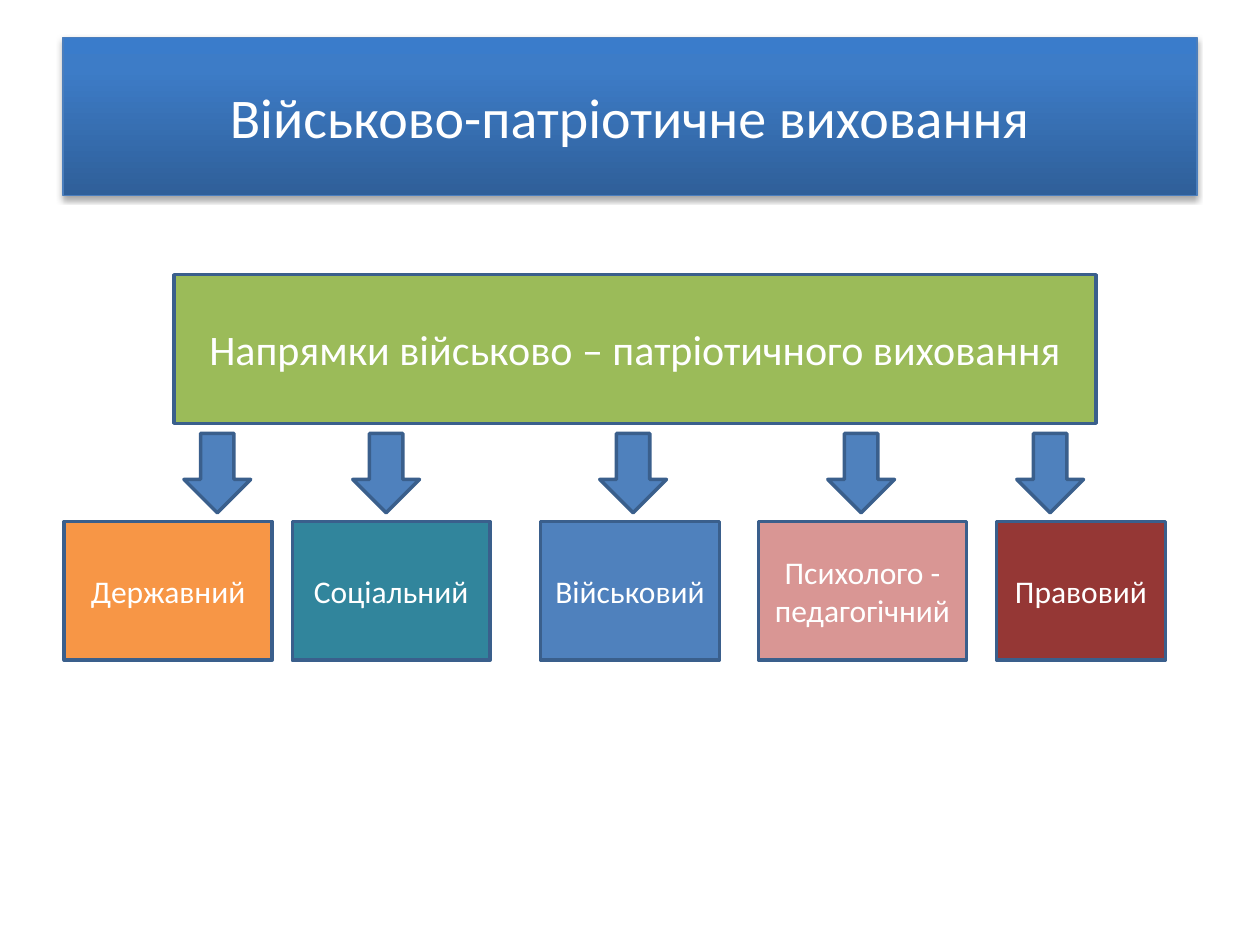
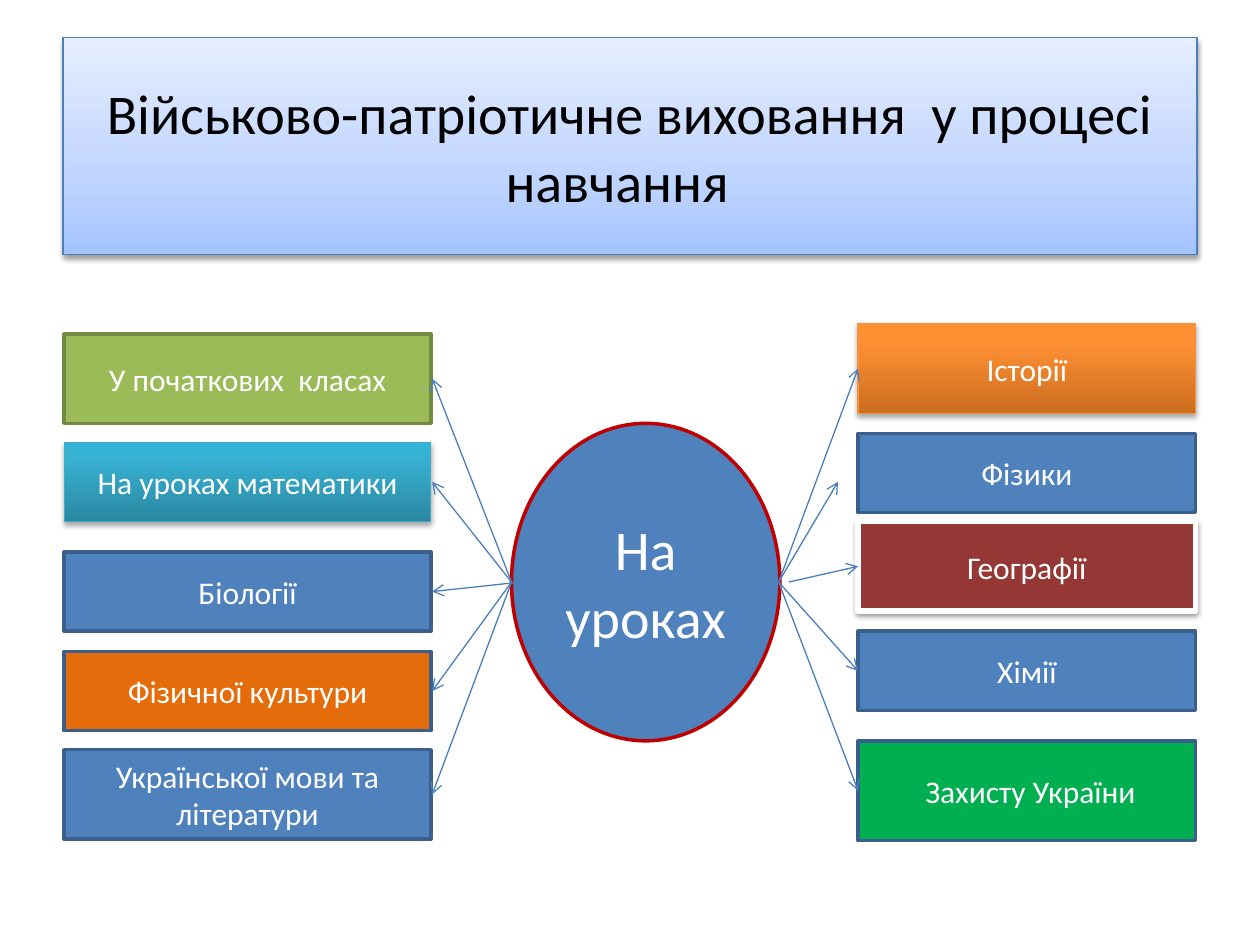
"""Builds two slides on military and patriotic education: its branches and its school lessons."""
import copy
import pptx
import pptx.util
import pptx.dml.color
import pptx.enum.shapes
import pptx.enum.text
import pptx.oxml
import pptx.oxml.ns

RGB = pptx.dml.color.RGBColor
KIND = pptx.enum.shapes.MSO_SHAPE
TEXT = pptx.enum.text
qn = pptx.oxml.ns.qn

WHITE = RGB(0xFF, 0xFF, 0xFF)
BLACK = RGB(0, 0, 0)
BLUE = RGB(0x4F, 0x81, 0xBD)
NAVY = RGB(0x3A, 0x5F, 0x8C)
EDGE = RGB(0x4B, 0x7E, 0xBC)
GREEN = RGB(0x9B, 0xBB, 0x59)
OLIVE = RGB(0x73, 0x8A, 0x42)
AMBER = RGB(0xF7, 0x96, 0x46)
TEAL = RGB(0x31, 0x85, 0x9C)
PINK = RGB(0xD9, 0x96, 0x94)
WINE = RGB(0x95, 0x37, 0x35)
RUST = RGB(0xE4, 0x6C, 0x0A)
LEAF = RGB(0x00, 0xB0, 0x50)
RED = RGB(0xC0, 0x00, 0x00)
AQUA = RGB(0x46, 0xAA, 0xC5)
GOLD = RGB(0xF6, 0x92, 0x40)
DEEP = [(0, RGB(0x2F, 0x5F, 0x99)), (.8, RGB(0x3D, 0x7C, 0xC7)), (1, RGB(0x3A, 0x7C, 0xCB))]
PALE = [(0, RGB(0xA4, 0xC4, 0xFF)), (.35, RGB(0xBF, 0xD4, 0xFF)), (1, RGB(0xE6, 0xEE, 0xFF))]
SEA = [(0, RGB(0x2A, 0x88, 0xA2)), (.8, RGB(0x37, 0xB1, 0xD2)), (1, RGB(0x34, 0xB4, 0xD6))]
SUN = [(0, RGB(0xCC, 0x6E, 0x20)), (.8, RGB(0xFF, 0x90, 0x34)), (1, RGB(0xFF, 0x91, 0x36))]

FONT = "Calibri"
WIDE, HIGH = pptx.util.Inches(10), pptx.util.Inches(7.5)
UNIT = WIDE / 100

STRONG = (1.8, 35)
SOFT = (1.6, 38)
PLAIN = (NAVY, 2, None)

HEAD = "Військово-патріотичне виховання"
THEME = "Напрямки військово – патріотичного виховання"
AREAS = [
    ("Державний", AMBER, 5.1, 16.5, 14.6),
    ("Соціальний", TEAL, 23.2, 15.7, 28),
    ("Військовий", BLUE, 42.9, 14.2, 47.6),
    ("Психолого - педагогічний", PINK, 60.2, 16.5, 65.7),
    ("Правовий", WINE, 79.1, 13.4, 80.7),
]

GOAL = "Військово-патріотичне виховання  у процесі навчання  "
HUB = "На уроках"
LEFT = [
    ("У початкових  класах", 26.5, 7.1, GREEN, (OLIVE, 2, None)),
    ("На уроках математики", 35.1, 6.3, SEA, (AQUA, .75, STRONG)),
    ("Біології", 43.8, 6.3, BLUE, PLAIN),
    ("Фізичної культури", 51.7, 6.3, RUST, PLAIN),
    ("Української мови та літератури", 59.5, 7.1, BLUE, PLAIN),
]
RIGHT = [
    ("Історії", 25.7, 7.1, SUN, (GOLD, .75, STRONG)),
    ("Фізики", 34.4, 6.3, BLUE, PLAIN),
    ("Географії", 41.4, 7.1, WINE, (WHITE, 3, SOFT)),
    ("Хімії", 50.1, 6.3, BLUE, PLAIN),
    (" Захисту України", 58.8, 7.9, LEAF, PLAIN),
]
SIDES = [
    (LEFT, 5.1, 29.1, 34.3, 40.6, {2: (.7, 0, 0)}),
    (RIGHT, 68.1, 26.8, 68.1, 61.8, {1: (0, -1.6, .7), 2: (.8, 0, 0)}),
]


def cells(*nums):
    return [round(n * UNIT) for n in nums]


def paint(shape, fill):
    if not isinstance(fill, list):
        shape.fill.solid()
        shape.fill.fore_color.rgb = fill
        return
    shape.fill.gradient()
    shape.fill.gradient_angle = 90
    stops = shape.element.spPr.find(".//" + qn("a:gsLst"))
    stops.append(copy.deepcopy(stops[0]))
    for stop, (place, tint) in zip(shape.fill.gradient_stops, fill):
        stop.position = place
        stop.color.rgb = tint


def shade(shape, gap, alpha):
    blur, dist = pptx.util.Pt(3.1), pptx.util.Pt(gap)
    shape.element.spPr.find(qn("a:effectLst")).append(pptx.oxml.parse_xml(
        f'<a:outerShdw {pptx.oxml.ns.nsdecls("a")} blurRad="{blur}" dist="{dist}" dir="5400000" '
        f'rotWithShape="0"><a:srgbClr val="000000"><a:alpha val="{alpha * 1000}"/>'
        '</a:srgbClr></a:outerShdw>'))


def block(slide, box, fill, trim=PLAIN, text="", size=18, ink=WHITE, kind=KIND.RECTANGLE):
    shape = slide.shapes.add_shape(kind, *cells(*box))
    line, weight, cast = trim
    paint(shape, fill)
    shape.line.color.rgb = line
    shape.line.width = pptx.util.Pt(weight)
    shape.shadow.inherit = False
    if cast:
        shade(shape, *cast)
    if text:
        frame = shape.text_frame
        frame.text = text
        frame.word_wrap = True
        frame.vertical_anchor = TEXT.MSO_ANCHOR.MIDDLE
        para = frame.paragraphs[0]
        para.alignment = TEXT.PP_ALIGN.CENTER
        font = para.runs[0].font
        font.name, font.size, font.color.rgb = FONT, pptx.util.Pt(size), ink


def title(slide, text, tall, fill, ink, cast):
    block(slide, (5, 3, 90, tall), fill, (EDGE, .75, cast), text, 32, ink)


def arrow(slide, *ends):
    link = slide.shapes.add_connector(pptx.enum.shapes.MSO_CONNECTOR.STRAIGHT, *cells(*ends))
    link.line.color.rgb = EDGE
    link.line.width = pptx.util.Pt(.75)
    props = link.element.spPr
    tip = props.find(qn("a:ln")).makeelement(qn("a:tailEnd"), {"type": "arrow"})
    props.find(qn("a:ln")).append(tip)
    props.append(props.makeelement(qn("a:effectLst"), {}))


def areas(slide):
    title(slide, HEAD, 12.5, DEEP, WHITE, STRONG)
    block(slide, (13.8, 21.8, 73.2, 11.8), GREEN, text=THEME, size=24)
    for text, fill, left, wide, point in AREAS:
        block(slide, (left, 41.4, wide, 11), fill, text=text)
        block(slide, (point, 34.4, 5.3, 6.3), BLUE, kind=KIND.DOWN_ARROW)


def lessons(slide):
    title(slide, GOAL, 17.2, PALE, BLACK, SOFT)
    block(slide, (40.6, 33.6, 21.3, 25.2), BLUE, (RED, 2, None), HUB, 32, kind=KIND.OVAL)
    for rows, left, wide, edge, start, shifts in SIDES:
        for num, (text, top, tall, fill, trim) in enumerate(rows):
            block(slide, (left, top, wide, tall), fill, trim, text)
            begin, over, down = shifts.get(num, (0, 0, 0))
            arrow(slide, start + begin, 46.2, edge + over, top + tall / 2 + down)


def main():
    deck = pptx.Presentation()
    deck.slide_width, deck.slide_height = WIDE, HIGH
    for draw in (areas, lessons):
        draw(deck.slides.add_slide(deck.slide_layouts[6]))
    deck.save("out.pptx")


if __name__ == "__main__":
    main()
